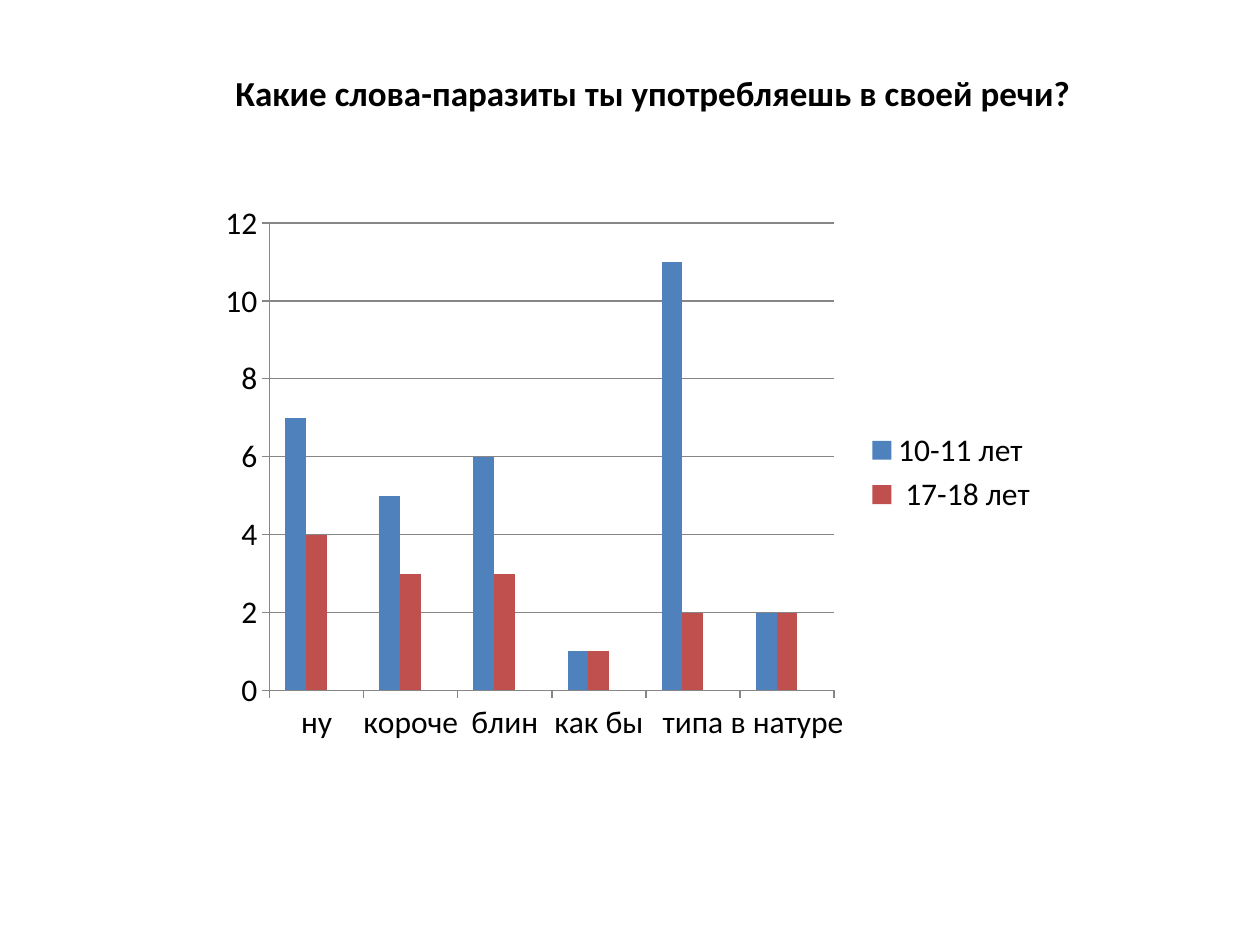
from lxml.etree import SubElement
from pptx import Presentation
from pptx.chart.data import CategoryChartData
from pptx.dml.color import RGBColor
from pptx.enum.chart import XL_CHART_TYPE as ChartType, XL_LEGEND_POSITION as LegendPosition, XL_TICK_MARK as TickMark
from pptx.enum.text import MSO_AUTO_SIZE as AutoSize
from pptx.oxml.ns import qn
from pptx.util import Inches, Pt

COLORS = {"text": "000000", "grid": "868686", "younger": "4F81BD", "older": "C0504D", "empty": "9BBB59"}
WORDS = ["ну", "короче", "блин", "как бы", "типа", "в натуре"]
ANSWERS = [
    ("10-11 лет", [7, 5, 6, 1, 11, 2], "younger"),
    (" 17-18 лет", [4, 3, 3, 1, 2, 2], "older"),
    ("Series 3", [None] * len(WORDS), "empty"),
]


class SlideBuilder:
    font_name = "Calibri"

    def __init__(self, page):
        self.page = page

    def style_font(self, font, size, bold=False):
        font.name = self.font_name
        font.size = Pt(size)
        font.bold = bold
        font.color.rgb = RGBColor.from_string(COLORS["text"])

    def style_line(self, line):
        line.color.rgb = RGBColor.from_string(COLORS["grid"])
        line.width = Pt(0.75)

    def title(self, text, left, top, width, height):
        box = self.page.shapes.add_textbox(Inches(left), Inches(top), Inches(width), Inches(height))
        frame = box.text_frame
        frame.text = text
        frame.word_wrap = False
        frame.auto_size = AutoSize.SHAPE_TO_FIT_TEXT
        self.style_font(frame.paragraphs[0].runs[0].font, 20, bold=True)

    def column_chart(self, categories, answers, left, top, width, height):
        data = CategoryChartData()
        data.categories = categories
        for name, values, _ in answers:
            data.add_series(name, values)
        chart = self.page.shapes.add_chart(
            ChartType.COLUMN_CLUSTERED, Inches(left), Inches(top), Inches(width), Inches(height), data
        ).chart
        chart.has_title = False
        self.style_font(chart.font, 18)

        plot = chart.plots[0]
        plot.gap_width = 150
        plot.vary_by_categories = False
        for series, (_, _, color) in zip(plot.series, answers):
            series.format.fill.solid()
            series.format.fill.fore_color.rgb = RGBColor.from_string(COLORS[color])

        for axis in (chart.category_axis, chart.value_axis):
            axis.major_tick_mark = TickMark.OUTSIDE
            axis.minor_tick_mark = TickMark.NONE
            self.style_line(axis.format.line)
        chart.value_axis.has_major_gridlines = True
        self.style_line(chart.value_axis.major_gridlines.format.line)
        self.legend(chart, hidden_entry=len(answers) - 1)

    def legend(self, chart, hidden_entry):
        chart.has_legend = True
        chart.legend.position = LegendPosition.RIGHT
        chart.legend.include_in_layout = False
        element = chart.legend._element
        entry = SubElement(element, qn("c:legendEntry"))
        SubElement(entry, qn("c:idx")).set("val", str(hidden_entry))
        SubElement(entry, qn("c:delete")).set("val", "1")
        element.find(qn("c:legendPos")).addnext(entry)


def main():
    deck = Presentation()
    deck.slide_width = Inches(10)
    deck.slide_height = Inches(7.5)
    builder = SlideBuilder(deck.slides.add_slide(deck.slide_layouts[6]))
    builder.column_chart(WORDS, ANSWERS, 1.67, 1.53, 6.67, 4.44)
    builder.title("Какие слова-паразиты ты употребляешь в своей речи?", 1.77, 0.52, 6.88, 0.44)
    deck.save("out.pptx")


if __name__ == "__main__":
    main()
